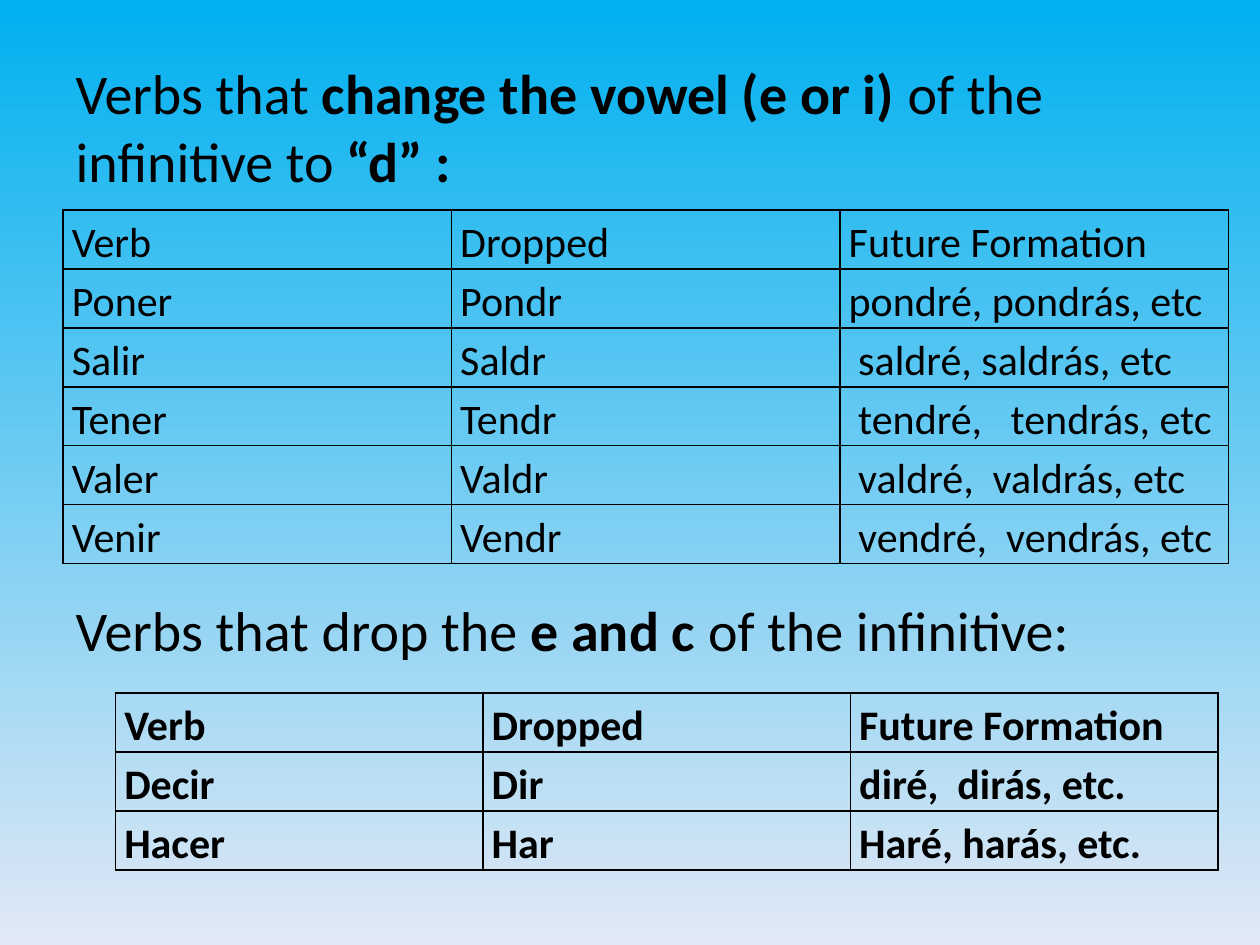
from lxml import etree
from pptx import Presentation
from pptx import util as u
from pptx.dml.color import RGBColor
from pptx.enum import text
from pptx.oxml import ns

BLACK = RGBColor(0x00, 0x00, 0x00)
SKY = RGBColor(0x00, 0xB0, 0xF0)
MIST = RGBColor(0xE1, 0xE8, 0xF5)

HEADER = ["Verb", "Dropped", "Future Formation"]
VOWEL_TO_D = [
    HEADER,
    ["Poner", "Pondr", "pondré, pondrás, etc"],
    ["Salir", "Saldr", " saldré, saldrás, etc"],
    ["Tener", "Tendr", " tendré,   tendrás, etc"],
    ["Valer", "Valdr", " valdré,  valdrás, etc"],
    ["Venir", "Vendr", " vendré,  vendrás, etc"],
]
DROP_E_AND_C = [
    HEADER,
    ["Decir", "Dir", "diré,  dirás, etc."],
    ["Hacer", "Har", "Haré, harás, etc."],
]


class Deck:
    """Style and current slide; lengths are cells of a 120 x 90 grid."""

    FONT = "Calibri"
    BODY_SIZE, TABLE_SIZE = 32, 24
    ROW = 5.5
    UNIT = u.Inches(1) / 12

    def __init__(self):
        self.prs = Presentation()
        self.prs.slide_width, self.prs.slide_height = self.grid(120, 90)

    def grid(self, *cells):
        return [u.Emu(round(n * self.UNIT)) for n in cells]

    def add_slide(self, top, bottom):
        self.slide = self.prs.slides.add_slide(self.prs.slide_layouts[1])
        title = self.slide.shapes.title
        title.element.getparent().remove(title.element)
        fill = self.slide.background.fill
        fill.gradient()
        fill.gradient_angle = 270
        for stop, color, position in zip(fill.gradient_stops, (top, bottom), (0, 1)):
            stop.color.rgb = color
            stop.position = position

    def style(self, r, size, bold):
        r.font.name, r.font.size, r.font.bold = self.FONT, u.Pt(size), bold
        r.font.color.rgb = BLACK

    def body(self, left, top, width, height, paragraphs):
        """Each paragraph is (space before, pieces); every second piece is bold."""
        sp = self.slide.placeholders[1]
        sp.left, sp.top, sp.width, sp.height = self.grid(left, top, width, height)
        tf = sp.text_frame
        tf.auto_size = text.MSO_AUTO_SIZE.NONE
        tf.text = "\n".join("" for _ in paragraphs)
        for p, (before, pieces) in zip(tf.paragraphs, paragraphs):
            p.space_before = u.Pt(before)
            pPr = p._p.get_or_add_pPr()
            pPr.set("marL", "0")
            pPr.set("indent", "0")
            etree.SubElement(pPr, ns.qn("a:buNone"))
            for i, piece in enumerate(pieces):
                r = p.add_run()
                r.text = piece
                self.style(r, self.BODY_SIZE, i % 2 == 1)

    def table(self, left, top, width, rows, bold=False):
        frame = self.slide.shapes.add_table(
            len(rows), len(rows[0]),
            *self.grid(left, top, width, self.ROW * len(rows)))
        table = frame.table
        table.first_row = table.horz_banding = False
        for i, row in enumerate(rows):
            for j, words in enumerate(row):
                self.cell(table.cell(i, j), words, bold)

    def cell(self, cell, words, bold):
        cell.margin_left = cell.margin_right = u.Inches(0.07)
        cell.margin_top = cell.margin_bottom = 0
        cell.fill.background()
        p = cell.text_frame.paragraphs[0]
        p.text = words
        p.line_spacing = 1.15
        self.style(p.runs[0], self.TABLE_SIZE, bold)
        # Borders come before the fill in the cell properties
        tcPr = cell._tc.get_or_add_tcPr()
        for i, side in enumerate(("lnL", "lnR", "lnT", "lnB")):
            ln = etree.Element(ns.qn("a:" + side), w=str(u.Pt(1)))
            fill = etree.SubElement(ln, ns.qn("a:solidFill"))
            etree.SubElement(fill, ns.qn("a:srgbClr"), val=str(BLACK))
            tcPr.insert(i, ln)


def main():
    deck = Deck()
    deck.add_slide(SKY, MIST)

    # Rules, with room for the first table between them
    deck.body(6, 5, 114, 85, [
        (6, ["Verbs that ", "change the vowel (e or i) ",
             "of the infinitive to ", "“d” :"]),
        (230, ["Verbs that drop the ", "e and c", " of the infinitive:"]),
    ])

    # Verb tables
    deck.table(6, 20, 111, VOWEL_TO_D)
    deck.table(11, 66, 105, DROP_E_AND_C, bold=True)

    deck.prs.save("out.pptx")


if __name__ == "__main__":
    main()
